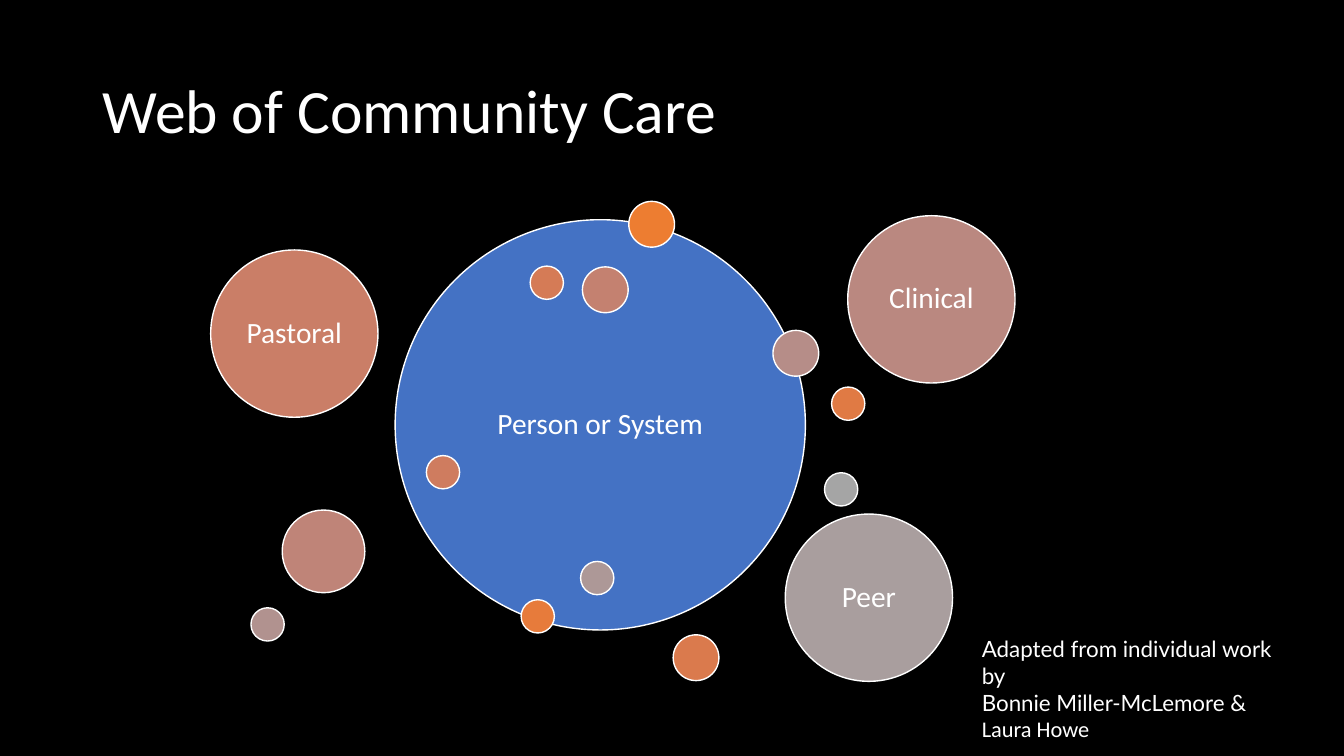
from dataclasses import dataclass

from pptx import Presentation
from pptx.dml.color import RGBColor
from pptx.enum.shapes import MSO_SHAPE
from pptx.enum.text import MSO_ANCHOR, MSO_AUTO_SIZE, PP_ALIGN
from pptx.shapes.group import GroupShape
from pptx.slide import Slide
from pptx.text.text import TextFrame, _Paragraph
from pptx.util import Emu, Inches, Pt

WIDTH, HEIGHT = Inches(13.33), Inches(7.5)
COLUMNS, ROWS = 160, 90

COLOURS = {
    "background": "000000",
    "text": "FFFFFF",
    "outline": "FFFFFF",
    "person": "4472C4",
    "top": "ED7D31",
    "bottom": "E77B3B",
    "right": "E07A44",
    "below": "DA7A4D",
    "inner left": "D57B56",
    "inner west": "CF7C5F",
    "pastoral": "CA7E67",
    "inner top": "C48170",
    "left": "BF8478",
    "clinical": "BA8880",
    "edge": "B68D88",
    "far left": "B1928F",
    "inner bottom": "AD9897",
    "peer": "A99E9E",
    "near peer": "A5A5A5",
}

# Circle diameters in grid units
CENTRE, LARGE, MEDIUM, SMALL, TINY = 48.84, 19.92, 9.84, 5.45, 3.96


@dataclass(frozen=True)
class Circle:
    """A circle by its centre and diameter in grid units."""
    colour: str
    column: float
    row: float
    diameter: float
    label: str = ""


CIRCLES = [
    Circle("person", 71.46, 50.58, CENTRE, "Person or System"),
    Circle("top", 77.58, 26.7, SMALL),
    Circle("bottom", 64.02, 73.38, TINY),
    Circle("right", 100.98, 48.06, TINY),
    Circle("below", 82.86, 78.3, SMALL),
    Circle("inner left", 65.1, 33.66, TINY),
    Circle("inner west", 52.74, 56.22, TINY),
    Circle("pastoral", 35.04, 39.72, LARGE, "Pastoral"),
    Circle("inner top", 72.06, 34.5, SMALL),
    Circle("left", 38.52, 65.64, MEDIUM),
    Circle("clinical", 110.88, 35.64, LARGE, "Clinical"),
    Circle("edge", 94.74, 42.06, SMALL),
    Circle("far left", 31.86, 74.34, TINY),
    Circle("inner bottom", 71.1, 68.82, TINY),
    Circle("peer", 103.44, 71.16, LARGE, "Peer"),
    Circle("near peer", 100.14, 58.26, TINY),
]

CREDIT = [
    ("Adapted from individual work by", "Lato"),
    ("Bonnie Miller-McLemore &", "Lato"),
    ("Laura Howe", "Calibri"),
]


def cols(n: float) -> Emu:
    return Emu(round(WIDTH * n / COLUMNS))


def rows(n: float) -> Emu:
    return Emu(round(HEIGHT * n / ROWS))


def rgb(name: str) -> RGBColor:
    return RGBColor.from_string(COLOURS[name])


def add_run(p: _Paragraph, text: str, size: float, font: str = "Calibri") -> None:
    r = p.add_run()
    r.text = text
    r.font.size = Pt(size)
    r.font.name = font
    r.font.color.rgb = rgb("text")


def add_single_line(tf: TextFrame, text: str, size: float, align: PP_ALIGN) -> None:
    """Write one vertically centred paragraph with tight line spacing."""
    tf.word_wrap = True
    tf.auto_size = MSO_AUTO_SIZE.NONE
    tf.vertical_anchor = MSO_ANCHOR.MIDDLE
    p = tf.paragraphs[0]
    p.alignment = align
    p.line_spacing = 0.9
    add_run(p, text, size)


def add_title(s: Slide) -> None:
    title = s.shapes.title
    title.left, title.top = cols(11), rows(4.8)
    title.width, title.height = cols(138), rows(17.4)
    add_single_line(title.text_frame, "Web of Community Care", 44, PP_ALIGN.LEFT)


def add_circle(web: GroupShape, circle: Circle) -> None:
    radius = circle.diameter / 2
    sp = web.shapes.add_shape(
        MSO_SHAPE.OVAL,
        cols(circle.column - radius), rows(circle.row - radius),
        cols(circle.diameter), rows(circle.diameter),
    )
    sp.shadow.inherit = False
    sp.fill.solid()
    sp.fill.fore_color.rgb = rgb(circle.colour)
    sp.line.color.rgb = rgb("outline")
    sp.line.width = Pt(1)
    if circle.label:
        tf = sp.text_frame
        tf.margin_left = tf.margin_right = Inches(0.09)
        tf.margin_top = tf.margin_bottom = Inches(0.09)
        add_single_line(tf, circle.label, 21, PP_ALIGN.CENTER)


def add_credit(s: Slide) -> None:
    box = s.shapes.add_textbox(cols(115.7), rows(75), cols(39.7), rows(10.9))
    tf = box.text_frame
    tf.word_wrap = True
    for i, (text, font) in enumerate(CREDIT):
        p = tf.add_paragraph() if i else tf.paragraphs[0]
        add_run(p, text, 16, font)


def main() -> None:
    prs = Presentation()
    prs.slide_width, prs.slide_height = WIDTH, HEIGHT
    s = prs.slides.add_slide(prs.slide_layouts[5])
    s.background.fill.solid()
    s.background.fill.fore_color.rgb = rgb("background")
    add_title(s)
    web = s.shapes.add_group_shape()
    for circle in CIRCLES:
        add_circle(web, circle)
    add_credit(s)
    prs.save("out.pptx")


if __name__ == "__main__":
    main()
